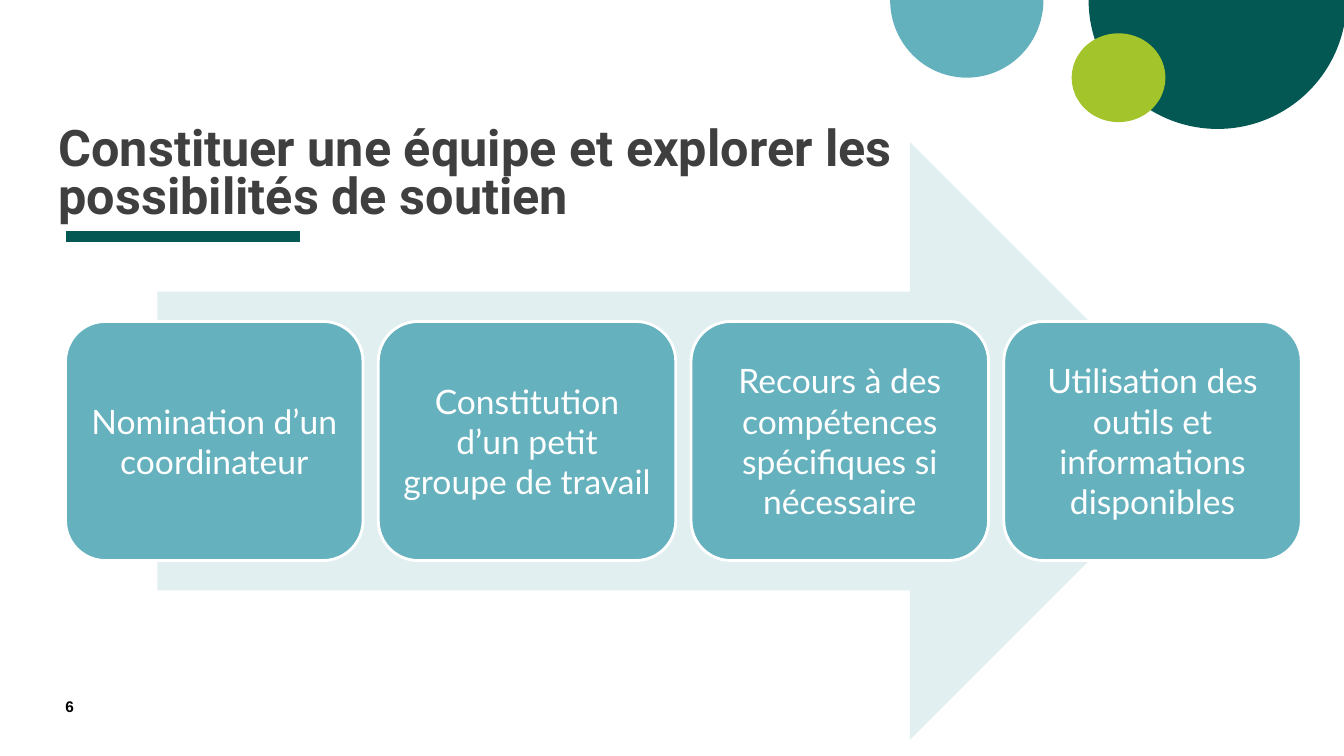
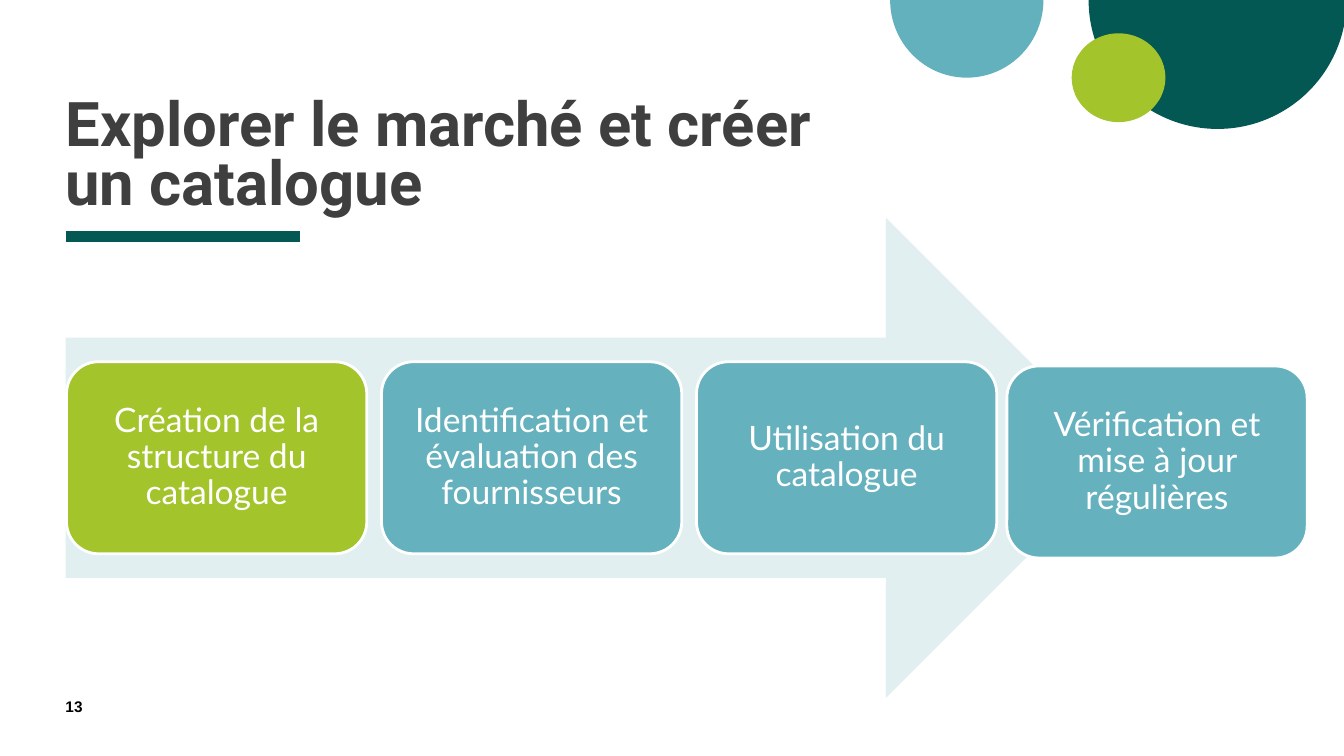
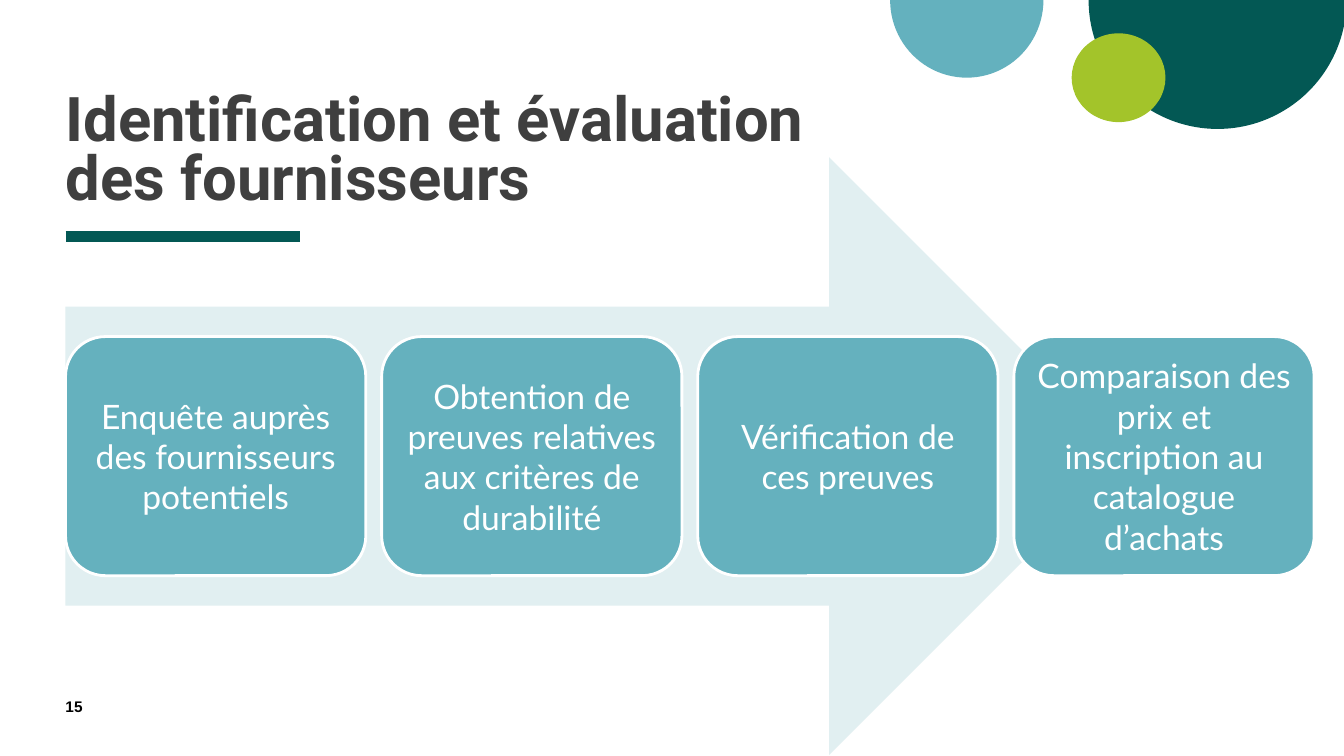
from dataclasses import dataclass

from lxml import etree
from pptx import Presentation
from pptx.dml.color import RGBColor
from pptx.enum.shapes import MSO_CONNECTOR, MSO_SHAPE
from pptx.enum.text import MSO_ANCHOR, PP_ALIGN
from pptx.oxml.ns import qn
from pptx.util import Pt

ARROW, CARD = MSO_SHAPE.RIGHT_ARROW, MSO_SHAPE.ROUNDED_RECTANGLE
PIE, OVAL = MSO_SHAPE.PIE, MSO_SHAPE.OVAL
STRAIGHT = MSO_CONNECTOR.STRAIGHT
TOP, MIDDLE, BOTTOM = MSO_ANCHOR.TOP, MSO_ANCHOR.MIDDLE, MSO_ANCHOR.BOTTOM
LEFT, CENTER = PP_ALIGN.LEFT, PP_ALIGN.CENTER

DARK_GREEN = "035854"
BLUE = "64B1BE"
CARD_BLUE = "65B1BE"
LIME = "A3C42A"
PALE = "E1EFF1"
WHITE = "FFFFFF"
GREY = "3F3F3F"
BLACK = "000000"

MARGIN = 46.8
HALF_TURN = 108
CARD_RATIO = 0.4
CARD_INSET = 8


@dataclass
class Process:
    """Content and layout of one process slide."""

    number: str
    title_lines: list
    title_size: int
    title_box: tuple
    arrow_box: tuple
    steps: list
    row_left: float
    card_width: float
    pitch: float
    line_spacing: float = 1.0
    current_step: int = -1
    last_shift: tuple = (0, 0)


PROCESSES = [
    Process(
        number="6",
        title_lines=["Constituer une équipe et explorer les possibilités de soutien"],
        title_size=36,
        title_box=(41.8, 12.2, 628, 148.3),
        arrow_box=(112.5, 101.5, 751, 427),
        steps=[
            "Nomination d’un coordinateur",
            "Constitution d’un petit groupe de travail",
            "Recours à des compétences spécifiques si nécessaire",
            "Utilisation des outils et informations disponibles",
        ],
        row_left=MARGIN,
        card_width=212.5,
        pitch=223.4,
    ),
    Process(
        number="13",
        title_lines=["Explorer le marché et créer", "un catalogue"],
        title_size=44,
        title_box=(MARGIN, 30.2, 734, 125.3),
        arrow_box=(MARGIN, 155.5, 757.5, 343),
        steps=[
            "Création de la structure du catalogue",
            "Identification et évaluation des fournisseurs",
            "Utilisation du catalogue",
            "Vérification et mise à jour régulières",
        ],
        row_left=47.5,
        card_width=214.5,
        pitch=225,
        line_spacing=0.9,
        current_step=0,
        last_shift=(-3.3, 3),
    ),
    Process(
        number="15",
        title_lines=["Identification et évaluation des fournisseurs"],
        title_size=44,
        title_box=(MARGIN, 26.6, 604, 125.3),
        arrow_box=(MARGIN, 112.3, 759, 427),
        steps=[
            "Enquête auprès des fournisseurs potentiels",
            "Obtention de preuves relatives aux critères de durabilité",
            "Vérification de ces preuves",
            "Comparaison des prix et inscription au catalogue d’achats",
        ],
        row_left=MARGIN,
        card_width=214.5,
        pitch=225.8,
    ),
]


def color(value):
    """Turn a hex string into a colour."""
    return RGBColor.from_string(value)


def points(box):
    """Turn the numbers of a box into lengths."""
    return [Pt(length) for length in box]


def add_shape(slide, kind, box, fill, outline=None):
    """Add a flat preset shape."""
    shape = slide.shapes.add_shape(kind, *points(box))
    shape.shadow.inherit = False
    shape.fill.solid()
    shape.fill.fore_color.rgb = color(fill)
    if outline:
        shape.line.color.rgb = color(outline)
        shape.line.width = Pt(2)
    else:
        shape.line.fill.background()
    return shape


def write(shape, lines, font_name, size, text_color, bold=False, anchor=TOP,
          align=LEFT, spacing=1.0, inset=0):
    """Write one paragraph, with line breaks between its lines."""
    frame = shape.text_frame
    frame.word_wrap = True
    frame.vertical_anchor = anchor
    frame.margin_left = frame.margin_right = Pt(inset)
    frame.margin_top = frame.margin_bottom = Pt(inset)
    paragraph = frame.paragraphs[0]
    paragraph.alignment = align
    paragraph.line_spacing = spacing
    for index, line in enumerate(lines):
        if index:
            paragraph.add_line_break()
        run = paragraph.add_run()
        run.text = line
        run.font.name = font_name
        run.font.size = Pt(size)
        run.font.bold = bold
        run.font.color.rgb = color(text_color)


def add_decoration(slide):
    """Draw the corner circles and the rule under the title."""
    circles = [
        (PIE, (777.6, -92.2, 184.3, 184.3), DARK_GREEN),
        (PIE, (635.8, -55.4, 109.5, 110.9), BLUE),
        (OVAL, (765.5, 23.8, 67, 63.4), LIME),
    ]
    for kind, box, fill in circles:
        circle = add_shape(slide, kind, box, fill)
        if kind == PIE:
            circle.adjustments[0] = 0
            circle.adjustments[1] = HALF_TURN
    rule = slide.shapes.add_connector(
        STRAIGHT, *points((MARGIN, 169.2, 214.6, 169.2)))
    rule.line.color.rgb = color(DARK_GREEN)
    rule.line.width = Pt(8)
    properties = rule._element.find(qn("p:spPr"))
    etree.SubElement(properties, qn("a:effectLst"))


def add_title(slide, box, lines, size):
    """Add the slide title, resting on the bottom of its box."""
    title = slide.shapes.add_textbox(*points(box))
    write(title, lines, "Roboto", size, GREY, bold=True, anchor=BOTTOM, spacing=0.8)


def add_page_number(slide, number):
    """Add the page number at the bottom left."""
    label = slide.shapes.add_textbox(*points((MARGIN, 498.2, 41, 19.4)))
    write(label, [number], "Arial", 11, BLACK, bold=True)


def add_process(slide, process):
    """Draw the arrow and a row of cards centred on its height."""
    add_shape(slide, ARROW, process.arrow_box, PALE)
    _, arrow_top, _, arrow_height = process.arrow_box
    card_height = arrow_height * CARD_RATIO
    row_top = arrow_top + (arrow_height - card_height) / 2
    last = len(process.steps) - 1
    for index, step in enumerate(process.steps):
        shift_x, shift_y = process.last_shift if index == last else (0, 0)
        left = process.row_left + index * process.pitch + shift_x
        box = (left, row_top + shift_y, process.card_width, card_height)
        fill = LIME if index == process.current_step else CARD_BLUE
        card = add_shape(slide, CARD, box, fill, WHITE)
        write(card, [step], "Lato", 24, WHITE, anchor=MIDDLE, align=CENTER,
              spacing=process.line_spacing, inset=CARD_INSET)


def add_process_slide(presentation, process):
    """Add one complete process slide."""
    slide = presentation.slides.add_slide(presentation.slide_layouts[6])
    add_decoration(slide)
    add_title(slide, process.title_box, process.title_lines, process.title_size)
    add_page_number(slide, process.number)
    add_process(slide, process)


def main():
    """Build and save the presentation."""
    presentation = Presentation()
    presentation.slide_width, presentation.slide_height = Pt(960), Pt(540)
    for process in PROCESSES:
        add_process_slide(presentation, process)
    presentation.save("out.pptx")


if __name__ == "__main__":
    main()
